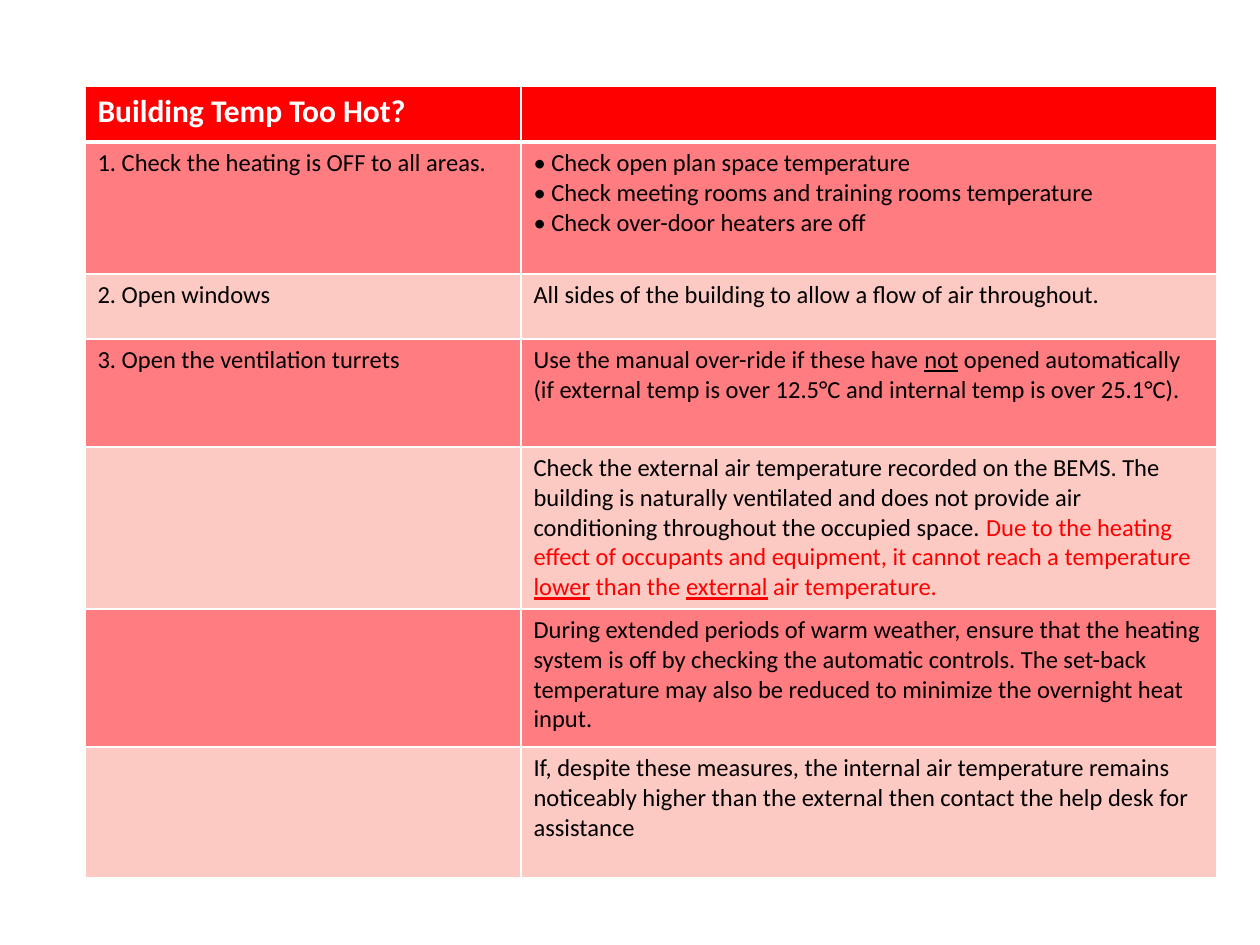
from lxml.etree import SubElement
from pptx import Presentation
from pptx.dml.color import RGBColor
from pptx.oxml.ns import qn
from pptx.util import Emu, Pt

THEME = {
    "font": "Calibri",
    "header_size": 18,
    "body_size": 14,
    "header_fill": "FF0000",
    "band_fills": ("FF7C80", "FDC9C3"),
    "border": "FFFFFF",
    "header_text": "FFFFFF",
    "text": "000000",
    "warning": "FF0000",
    "border_width": 1,
    "header_rule": 3,
}
PX = 914400 / 126

WARN = {"color": THEME["warning"]}
UNDERLINE = {"underline": True}

# Each cell is a list of paragraphs, each paragraph a list of (text, format) runs.
ROWS = [
    (56, [[("Building Temp Too Hot?", {})]], []),
    (132, [[("1. Check the heating is OFF to all areas.", {})]],
     [[("• Check open plan space temperature", {})],
      [("• Check meeting rooms and training rooms temperature", {})],
      [("• Check over-door heaters are off", {})]]),
    (65, [[("2. Open windows", {})]],
     [[("All sides of the building to allow a flow of air throughout.", {})]]),
    (108, [[("3. Open the ventilation turrets", {})]],
     [[("Use the manual over-ride if these have ", {}),
       ("not", UNDERLINE),
       (" opened automatically (if external temp is over 12.5°C "
        "and internal temp is over 25.1°C).", {})]]),
    (162, [],
     [[("Check the external air temperature recorded on the BEMS. The building "
        "is naturally ventilated and does not provide air conditioning "
        "throughout the occupied space. ", {}),
       ("Due to the heating effect of occupants and equipment, "
        "it cannot reach a temperature ", WARN),
       ("lower", WARN | UNDERLINE),
       (" than the ", WARN),
       ("external", WARN | UNDERLINE),
       (" air temperature.", WARN)]]),
    (138, [],
     [[("During extended periods of warm weather, ensure that the heating "
        "system is off by checking the automatic controls. The set-back "
        "temperature may also be reduced to minimize the overnight heat", {})],
      [("input.", {})]]),
    (131, [],
     [[("If, despite these measures, the internal air temperature remains "
        "noticeably higher than the external then contact the help desk for "
        "assistance", {})]]),
]
COLUMNS = (436, 696)
LEFT, TOP = 85, 86


def px(length):
    return Emu(round(length * PX))


def set_borders(cell, top, bottom):
    """Draw all four cell borders; top and bottom are widths in points."""
    properties = cell._tc.get_or_add_tcPr()
    side = THEME["border_width"]
    widths = {"a:lnL": side, "a:lnR": side, "a:lnT": top, "a:lnB": bottom}
    for index, (tag, width) in enumerate(widths.items()):
        line = SubElement(properties, qn(tag), w=str(Pt(width)))
        fill = SubElement(line, qn("a:solidFill"))
        SubElement(fill, qn("a:srgbClr"), val=THEME["border"])
        properties.insert(index, line)


presentation = Presentation()
presentation.slide_width, presentation.slide_height = px(1260), px(945)
slide = presentation.slides.add_slide(presentation.slide_layouts[6])

heights = [row[0] for row in ROWS]
table = slide.shapes.add_table(
    len(ROWS), len(COLUMNS), px(LEFT), px(TOP), px(sum(COLUMNS)), px(sum(heights))
).table
for column, width in zip(table.columns, COLUMNS):
    column.width = px(width)

for row_index, (height, *contents) in enumerate(ROWS):
    table.rows[row_index].height = px(height)
    is_header = row_index == 0
    cell_fill = THEME["header_fill"] if is_header else THEME["band_fills"][(row_index - 1) % 2]
    top = THEME["header_rule"] if row_index == 1 else THEME["border_width"]
    bottom = THEME["header_rule"] if is_header else THEME["border_width"]
    base_format = {
        "name": THEME["font"],
        "size": Pt(THEME["header_size"] if is_header else THEME["body_size"]),
        "bold": is_header,
        "color": THEME["header_text"] if is_header else THEME["text"],
    }

    for column_index, paragraphs in enumerate(contents):
        cell = table.cell(row_index, column_index)
        cell.fill.solid()
        cell.fill.fore_color.rgb = RGBColor.from_string(cell_fill)
        set_borders(cell, top, bottom)

        for paragraph_index, runs in enumerate(paragraphs):
            frame = cell.text_frame
            paragraph = frame.add_paragraph() if paragraph_index else frame.paragraphs[0]
            for text, extra in runs:
                run = paragraph.add_run()
                run.text = text
                for name, value in (base_format | extra).items():
                    if name == "color":
                        run.font.color.rgb = RGBColor.from_string(value)
                    else:
                        setattr(run.font, name, value)

presentation.save("out.pptx")
